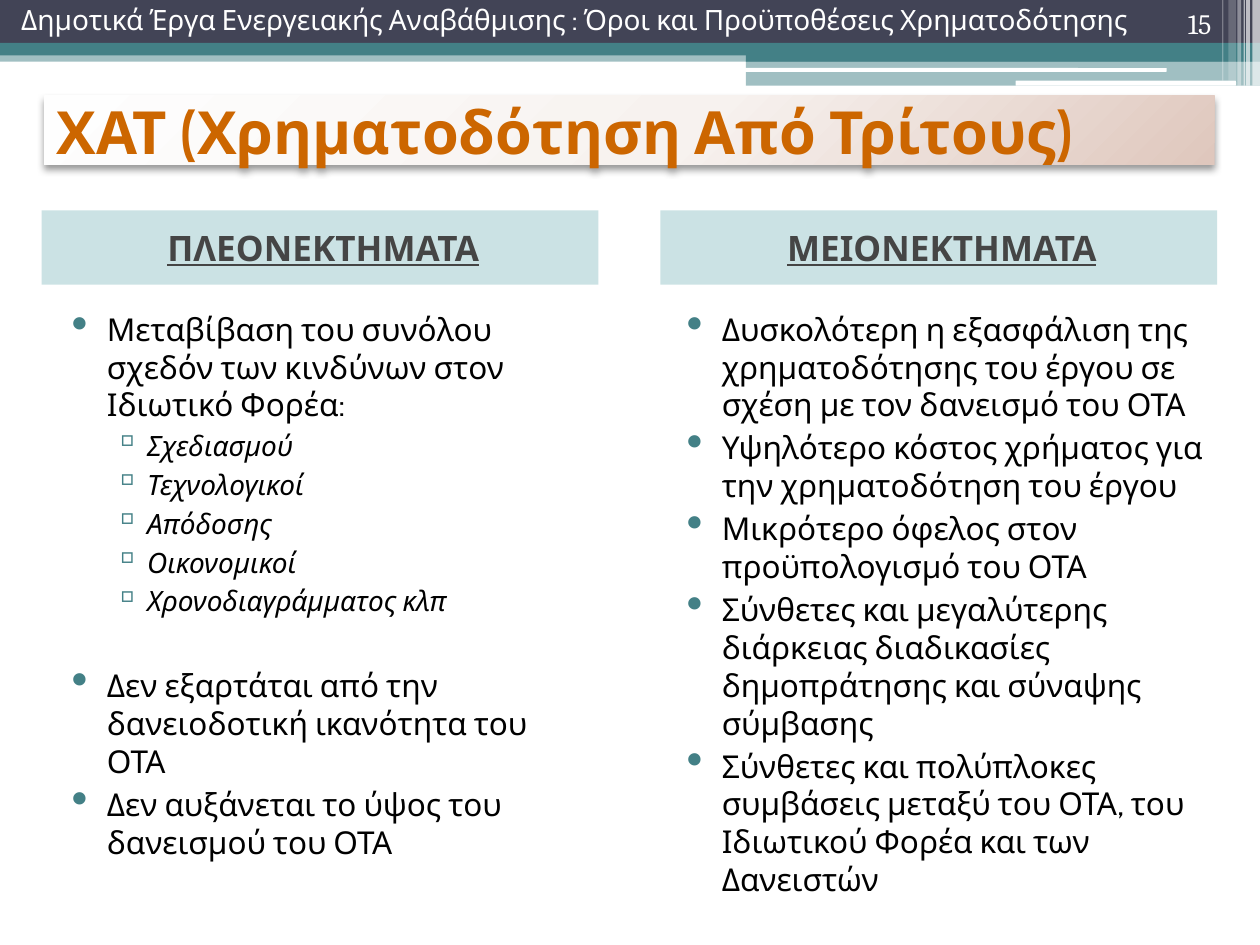
import pptx
import pptx.dml.color
import pptx.enum.shapes
import pptx.enum.text
import pptx.oxml
import pptx.oxml.ns
import pptx.util

COLUMNS, ROWS = 1000, 750
SLIDE_WIDTH, SLIDE_HEIGHT = pptx.util.Inches(10), pptx.util.Inches(7.5)
TEAL, NAVY, WHITE, BLACK = "438086", "424456", "FFFFFF", "000000"
BODY_FONT, NUMBER_FONT = "Cabin", "Cambria"
NAMESPACE = pptx.oxml.ns.nsdecls("a")
SHAPES = pptx.enum.shapes.MSO_SHAPE
ALIGN = pptx.enum.text.PP_ALIGN
ANCHOR = pptx.enum.text.MSO_ANCHOR

# Bullet character, size in percent, left margin, hanging indent, text size
BULLETS = [("•", 150, 0.4, -0.28, 18), ("▫", 115, 0.72, -0.27, 16)]

ADVANTAGES = [
    (0, "Μεταβίβαση του συνόλου σχεδόν των κινδύνων στον Ιδιωτικό Φορέα:"),
    (1, "Σχεδιασμού"),
    (1, "Τεχνολογικοί"),
    (1, "Απόδοσης"),
    (1, "Οικονομικοί"),
    (1, "Χρονοδιαγράμματος κλπ"),
    (0, "Δεν εξαρτάται από την δανειοδοτική ικανότητα του ΟΤΑ"),
    (0, "Δεν αυξάνεται το ύψος του δανεισμού του ΟΤΑ"),
]
DISADVANTAGES = [
    (0, "Δυσκολότερη η εξασφάλιση της χρηματοδότησης του έργου σε σχέση με τον δανεισμό του ΟΤΑ"),
    (0, "Υψηλότερο κόστος χρήματος για την χρηματοδότηση του έργου"),
    (0, "Μικρότερο όφελος στον προϋπολογισμό του ΟΤΑ"),
    (0, "Σύνθετες και μεγαλύτερης διάρκειας διαδικασίες δημοπράτησης και σύναψης σύμβασης"),
    (0, "Σύνθετες και πολύπλοκες συμβάσεις μεταξύ του ΟΤΑ, του Ιδιωτικού Φορέα και των Δανειστών"),
]


def color(value):
    return pptx.dml.color.RGBColor.from_string(value)


def place(left, top, width, height):
    """Turn grid columns and rows into slide lengths."""
    column, row = SLIDE_WIDTH / COLUMNS, SLIDE_HEIGHT / ROWS
    return [round(left * column), round(top * row), round(width * column), round(height * row)]


def add_block(slide, area, fill=None, opacity=100, kind=SHAPES.RECTANGLE):
    shape = slide.shapes.add_shape(kind, *place(*area))
    shape.shadow.inherit = False
    shape.line.fill.background()
    if fill:
        shape.fill.solid()
        shape.fill.fore_color.rgb = color(fill)
    if opacity < 100:
        alpha = pptx.oxml.parse_xml(f'<a:alpha {NAMESPACE} val="{opacity * 1000}"/>')
        shape.fill._xPr.find(".//" + pptx.oxml.ns.qn("a:srgbClr")).append(alpha)
    return shape


def add_text_box(slide, area, anchor=ANCHOR.TOP, wrap=True):
    box = slide.shapes.add_textbox(*place(*area))
    box.text_frame.word_wrap = wrap
    box.text_frame.vertical_anchor = anchor
    return box


def write(paragraph, text, size=16, font=BODY_FONT, fill=WHITE, bold=False, italic=False,
          underline=False, align=ALIGN.LEFT, before=0, margin=0, indent=0):
    paragraph.alignment = align
    paragraph.space_before = pptx.util.Pt(before)
    properties = paragraph._p.get_or_add_pPr()
    properties.set("marL", str(pptx.util.Inches(margin)))
    properties.set("indent", str(pptx.util.Inches(indent)))
    run = paragraph.add_run()
    run.text = text
    run.font.name, run.font.size = font, pptx.util.Pt(size)
    run.font.bold, run.font.italic, run.font.underline = bold, italic, underline
    run.font.color.rgb = color(fill)


def add_bullet(paragraph, character, percent):
    for xml in (f'<a:buClr {NAMESPACE}><a:srgbClr val="{TEAL}"/></a:buClr>',
                f'<a:buSzPct {NAMESPACE} val="{percent * 1000}"/>',
                f'<a:buChar {NAMESPACE} char="{character}"/>'):
        paragraph._p.get_or_add_pPr().append(pptx.oxml.parse_xml(xml))


def add_bullet_list(slide, area, items):
    frame = add_text_box(slide, area).text_frame
    previous = 0
    for index, (level, text) in enumerate(items):
        paragraph = frame.add_paragraph() if index else frame.paragraphs[0]
        character, percent, margin, indent, size = BULLETS[level]
        # A return to the first level opens a new group, one line lower
        before = 28 if level < previous else 3
        paragraph.level = level
        write(paragraph, text, size=size, fill=BLACK, italic=level == 1,
              before=before, margin=margin, indent=indent)
        add_bullet(paragraph, character, percent)
        previous = level


def add_header_bands(slide):
    for area, fill, opacity in [
        ((0, 40, 1000, 9), TEAL, 50),
        ((0, 0, 1000, 34), NAVY, 100),
        ((0, 34, 1000, 10), TEAL, 100),
        ((592, 39, 408, 10), TEAL, 100),
        ((592, 48, 408, 20), TEAL, 50),
    ]:
        add_block(slide, area, fill, opacity)
    for area in [(591, 54, 335, 3), (806, 64, 175, 4)]:
        add_block(slide, area, WHITE, kind=SHAPES.ROUNDED_RECTANGLE)
    for left, width, height, opacity in [
        (994, 6, 68, 65), (989, 3, 68, 65), (987, 1, 68, 60),
        (982, 3, 68, 40), (975, 6, 64, 20), (970, 1, 64, 30),
    ]:
        add_block(slide, (left, 0, width, height), WHITE, opacity)


def add_column_heading(slide, area, text):
    shape = add_block(slide, area, "328E97", 25)
    shape.text_frame.word_wrap = True
    shape.text_frame.vertical_anchor = ANCHOR.MIDDLE
    write(shape.text_frame.paragraphs[0], text, size=20, fill="454545", bold=True,
          underline=True, align=ALIGN.CENTER, before=3, margin=0.05)


def add_title(slide, area, text):
    """Add the title bar with its radial gradient and soft shadow."""
    shape = add_block(slide, area)
    properties = shape._element.spPr
    stops = "".join(
        f'<a:gs pos="{position * 1000}"><a:srgbClr val="{value}"/></a:gs>'
        for position, value in [(0, "FEFEFE"), (55, "F7F2EF"), (100, "DFC7BD")])
    gradient = pptx.oxml.parse_xml(
        f'<a:gradFill {NAMESPACE}><a:gsLst>{stops}</a:gsLst><a:path path="circle">'
        '<a:fillToRect l="-40000" t="-90000" r="140000" b="190000"/></a:path></a:gradFill>')
    properties.find(pptx.oxml.ns.qn("a:prstGeom")).addnext(gradient)
    shadow = pptx.oxml.parse_xml(
        f'<a:outerShdw {NAMESPACE} blurRad="{pptx.util.Pt(4.1)}" dist="{pptx.util.Pt(2)}" '
        f'dir="5400000" rotWithShape="0"><a:srgbClr val="{BLACK}"><a:alpha val="40000"/>'
        '</a:srgbClr></a:outerShdw>')
    properties.find(pptx.oxml.ns.qn("a:effectLst")).append(shadow)
    shape.text_frame.word_wrap = True
    shape.text_frame.vertical_anchor = ANCHOR.MIDDLE
    write(shape.text_frame.paragraphs[0], text, size=34, fill="CC6600", bold=True)


def main():
    presentation = pptx.Presentation()
    presentation.slide_width, presentation.slide_height = SLIDE_WIDTH, SLIDE_HEIGHT
    slide = presentation.slides.add_slide(presentation.slide_layouts[6])

    add_header_bands(slide)
    add_column_heading(slide, (33, 167, 442, 59), "ΠΛΕΟΝΕΚΤΗΜΑΤΑ")
    add_column_heading(slide, (524, 167, 442, 59), "ΜΕΙΟΝΕΚΤΗΜΑΤΑ")
    add_title(slide, (35, 76, 929, 55), "ΧΑΤ (Χρηματοδότηση Από Τρίτους)")
    add_bullet_list(slide, (35, 241, 442, 425), ADVANTAGES)
    add_bullet_list(slide, (523, 241, 442, 472), DISADVANTAGES)

    header = add_text_box(slide, (0, 0, 945, 31), ANCHOR.MIDDLE)
    write(header.text_frame.paragraphs[0],
          "Δημοτικά Έργα Ενεργειακής Αναβάθμισης : Όροι και Προϋποθέσεις Χρηματοδότησης",
          before=3, margin=0.07)
    number = add_text_box(slide, (933, 0, 42, 37), wrap=False)
    number.text_frame.auto_size = pptx.enum.text.MSO_AUTO_SIZE.SHAPE_TO_FIT_TEXT
    write(number.text_frame.paragraphs[0], "15", font=NUMBER_FONT)

    presentation.save("out.pptx")


if __name__ == "__main__":
    main()
